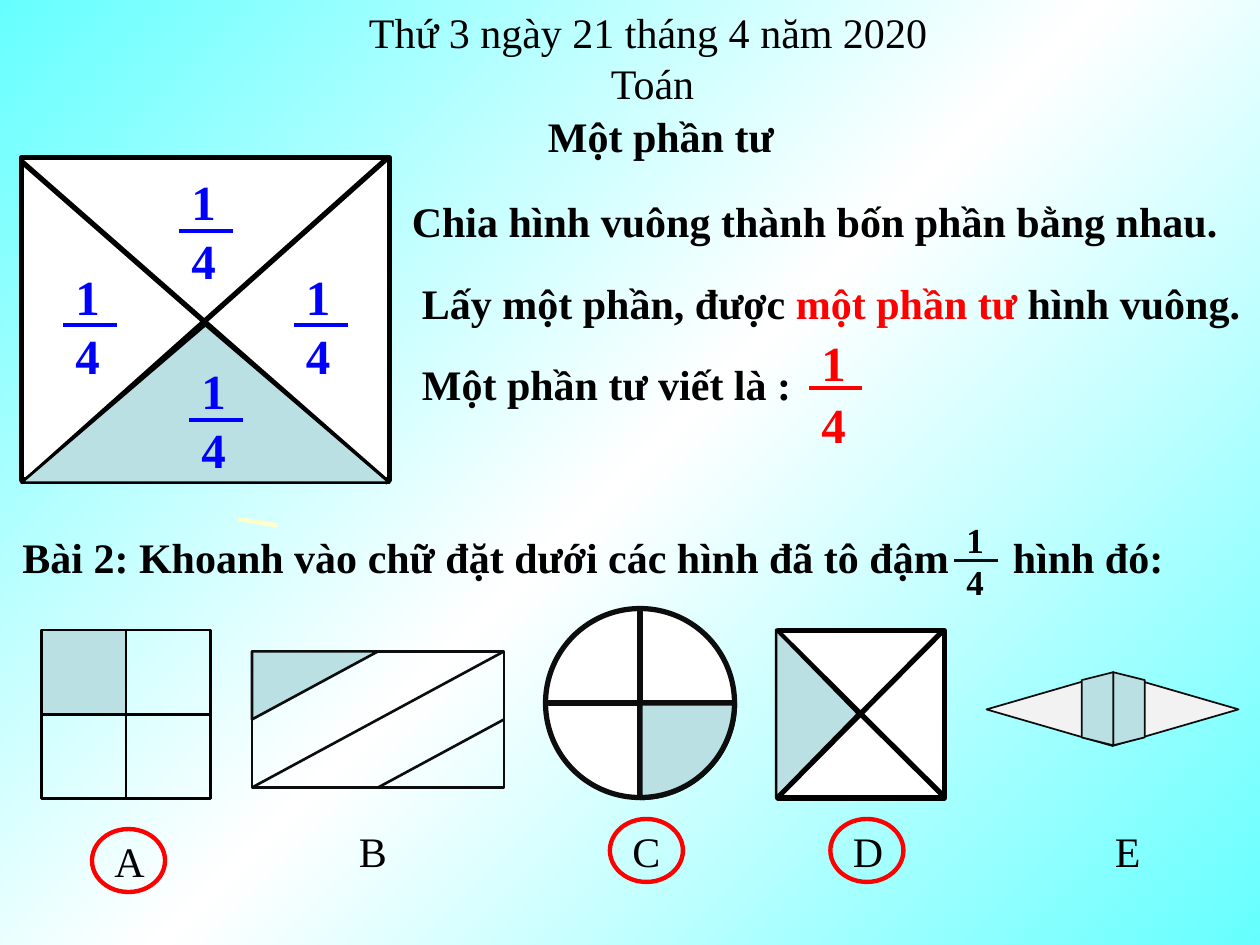
from copy import deepcopy

from lxml import etree
from pptx import Presentation
from pptx.dml.color import RGBColor
from pptx.enum.shapes import MSO_CONNECTOR, MSO_SHAPE
from pptx.enum.text import MSO_ANCHOR, PP_ALIGN
from pptx.oxml.ns import qn
from pptx.util import Inches, Pt

RECT, ELLIPSE, PIE = MSO_SHAPE.RECTANGLE, MSO_SHAPE.OVAL, MSO_SHAPE.PIE
TRIANGLE, RIGHT_TRIANGLE = MSO_SHAPE.ISOSCELES_TRIANGLE, MSO_SHAPE.RIGHT_TRIANGLE
TRAPEZOID, CROSSED_CIRCLE = MSO_SHAPE.TRAPEZOID, MSO_SHAPE.FLOWCHART_OR
STRAIGHT = MSO_CONNECTOR.STRAIGHT
TOP, MIDDLE = MSO_ANCHOR.TOP, MSO_ANCHOR.MIDDLE
LEFT, CENTER = PP_ALIGN.LEFT, PP_ALIGN.CENTER

FONT = "Times New Roman"
BLACK, INK, WHITE, GREY = "000000", "0D0D0D", "FFFFFF", "F2F2F2"
RED, BLUE, SHADE, CREAM = "FF0000", "0000FF", "BBE0E3", "FFFFCC"
BACKGROUND = [(0, "66FFFF"), (0.5, WHITE), (1, "66FFFF")]

# Content: (text, left, top, width, bold)
HEADINGS = [
    ("Thứ 3 ngày 21 tháng 4 năm 2020", 2.83, 0, 4.67, False),
    ("Toán", 4.75, 0.41, 0.87, False),
    ("Một phần tư", 4.25, 0.83, 2.01, True),
]
# (runs, left, top, width)
LESSON = [
    ([("Chia hình vuông thành bốn phần bằng nhau.", BLACK)], 3.17, 1.5, 6.67),
    ([("Lấy một phần, được ", BLACK), ("một phần tư ", RED),
      ("hình vuông.", BLACK)], 3.25, 2.15, 7.17),
    ([("Một phần tư viết là :", BLACK)], 3.25, 2.8, 5.92),
]
EXERCISE = "Bài 2: Khoanh vào chữ đặt dưới các hình đã tô đậm\thình đó:"
QUARTERS = [(1.42, 1.83), (0.5, 2.58), (2.33, 2.58), (1.5, 3.33)]
# (letter, left, top, circled)
ANSWERS = [
    ("A", 0.81, 6.58, True),
    ("B", 2.75, 6.5, False),
    ("C", 4.92, 6.5, True),
    ("D", 6.67, 6.5, True),
    ("E", 8.75, 6.5, False),
]

prs = Presentation()
prs.slide_width, prs.slide_height = Inches(10), Inches(7.5)
slide = prs.slides.add_slide(prs.slide_layouts[6])


def rgb(color):
    return RGBColor.from_string(color)


def text(paragraphs, left, top, width, height=0.5, size=24, bold=False,
         wrap=True, anchor=TOP, align=LEFT):
    """Each paragraph is a list of (text, colour) runs."""
    box = slide.shapes.add_textbox(*map(Inches, (left, top, width, height)))
    frame = box.text_frame
    frame.word_wrap, frame.vertical_anchor = wrap, anchor
    for i, runs in enumerate(paragraphs):
        paragraph = frame.add_paragraph() if i else frame.paragraphs[0]
        paragraph.alignment = align
        for words, color in runs:
            run = paragraph.add_run()
            run.text = words
            run.font.name, run.font.size, run.font.bold = FONT, Pt(size), bold
            run.font.color.rgb = rgb(color)
    return frame


def shape(kind, left, top, width, height, fill=None, line=BLACK, weight=1.5, turn=0):
    part = slide.shapes.add_shape(kind, *map(Inches, (left, top, width, height)))
    part.shadow.inherit = False
    part.rotation = turn
    if fill:
        part.fill.solid()
        part.fill.fore_color.rgb = rgb(fill)
    else:
        part.fill.background()
    part.line.color.rgb = rgb(line)
    part.line.width = Pt(weight)
    return part


def line(x1, y1, x2, y2, color=BLACK, weight=3):
    stroke = slide.shapes.add_connector(STRAIGHT, *map(Inches, (x1, y1, x2, y2)))
    stroke.line.color.rgb = rgb(color)
    stroke.line.width = Pt(weight)
    etree.SubElement(stroke.element.spPr, qn("a:effectLst"))


def quarter(left, bar_y, color=BLUE, size=28, bar=0.43, bar_color=None, weight=2.25,
            width=0.37):
    """The fraction 1/4 with its bar at bar_y."""
    text([[("1", color)], [("4", color)]], left, bar_y - 0.34, width, 0.68, size,
         bold=True, wrap=False, anchor=MIDDLE, align=CENTER)
    line(left, bar_y, left + bar, bar_y, bar_color or color, weight)


# Background gradient
background = slide.background.fill
background.gradient()
background.gradient_angle = 315
stop_list = slide.element.find(".//" + qn("a:gsLst"))
stop_list.insert(1, deepcopy(stop_list[0]))
for stop, (position, color) in zip(background.gradient_stops, BACKGROUND):
    stop.position = position
    stop.color.rgb = rgb(color)

# Headings and lesson
for words, left, top, width, bold in HEADINGS:
    text([[(words, BLACK)]], left, top, width, bold=bold, wrap=False)
for runs, left, top, width in LESSON:
    text([runs], left, top, width, bold=True)
for digit, top in (("1", 2.59), ("4", 3.08)):
    text([[(digit, RED)]], 6.42, top, 0.46, 0.57, 28, bold=True)
line(6.42, 3.08, 6.84, 3.08, RED, 2.25)

# Large square cut into four
shape(RECT, 0.17, 1.25, 2.92, 2.56, WHITE, weight=3)
line(0.17, 1.28, 3.08, 3.83)
line(3.08, 1.25, 0.21, 3.81)
shape(TRIANGLE, 0.17, 2.58, 2.92, 1.25, SHADE)
for left, bar_y in QUARTERS:
    quarter(left, bar_y)
line(1.89, 4.12, 2.2, 4.17, CREAM, 2.5)

# Exercise sentence, with a tab stop leaving room for the fraction
sentence = text([[(EXERCISE, BLACK)]], 0.08, 4.17, 9.42, bold=True)
tabs = etree.SubElement(sentence.paragraphs[0]._p.get_or_add_pPr(), qn("a:tabLst"))
etree.SubElement(tabs, qn("a:tab"), pos=str(Inches(7.86)), algn="l")
quarter(7.57, 4.45, BLACK, 20, 0.35, INK, 1.5, 0.34)

# Figure A: four squares
CELL = 0.67
for row in range(2):
    for column in range(2):
        shape(RECT, 0.33 + column * CELL, 5 + row * CELL, CELL, CELL,
              SHADE if row == column == 0 else None)

# Figure B: rectangle cut by slanted lines
shape(RECT, 2, 5.17, 2, 1.08, line=INK)
shape(RIGHT_TRIANGLE, 2.23, 4.94, 0.54, 1, SHADE, INK, turn=90)
line(2, 6.25, 4, 5.17, INK, 1.5)
line(3, 6.25, 4, 5.71, INK, 1.5)

# Figure C: circle with the lower right quarter shaded
shape(CROSSED_CIRCLE, 4.33, 4.83, 1.5, 1.5, WHITE, INK, 3)
sector = shape(PIE, 4.33, 4.83, 1.5, 1.5, SHADE, INK, 3)
sector.adjustments[0], sector.adjustments[1] = 0, 54  # 0 to 90 degrees

# Figure D: square with diagonals
shape(RECT, 6.17, 5.01, 1.33, 1.32, WHITE, weight=3, turn=90)
line(7.49, 5, 6.17, 6.33)
line(7.5, 6.33, 6.18, 5.02)
shape(TRIANGLE, 5.82, 5.34, 1.33, 0.65, SHADE, turn=90)

# Figure E: two mirrored halves of a diamond
for turn, tip_left, band_left in ((90, 9.04, 8.67), (270, 8.04, 8.42)):
    shape(TRIANGLE, tip_left, 5.13, 0.58, 1, GREY, INK, 1, turn)
    shape(TRAPEZOID, band_left, 5.5, 0.58, 0.25, SHADE, INK, 1, turn)

# Answer letters
for letter, left, top, circled in ANSWERS:
    text([[(letter, BLACK)]], left, top, 0.44)
    if circled:
        shape(ELLIPSE, left - 0.08, top, 0.58, 0.5, line=RED, weight=2.5)

prs.save("out.pptx")
